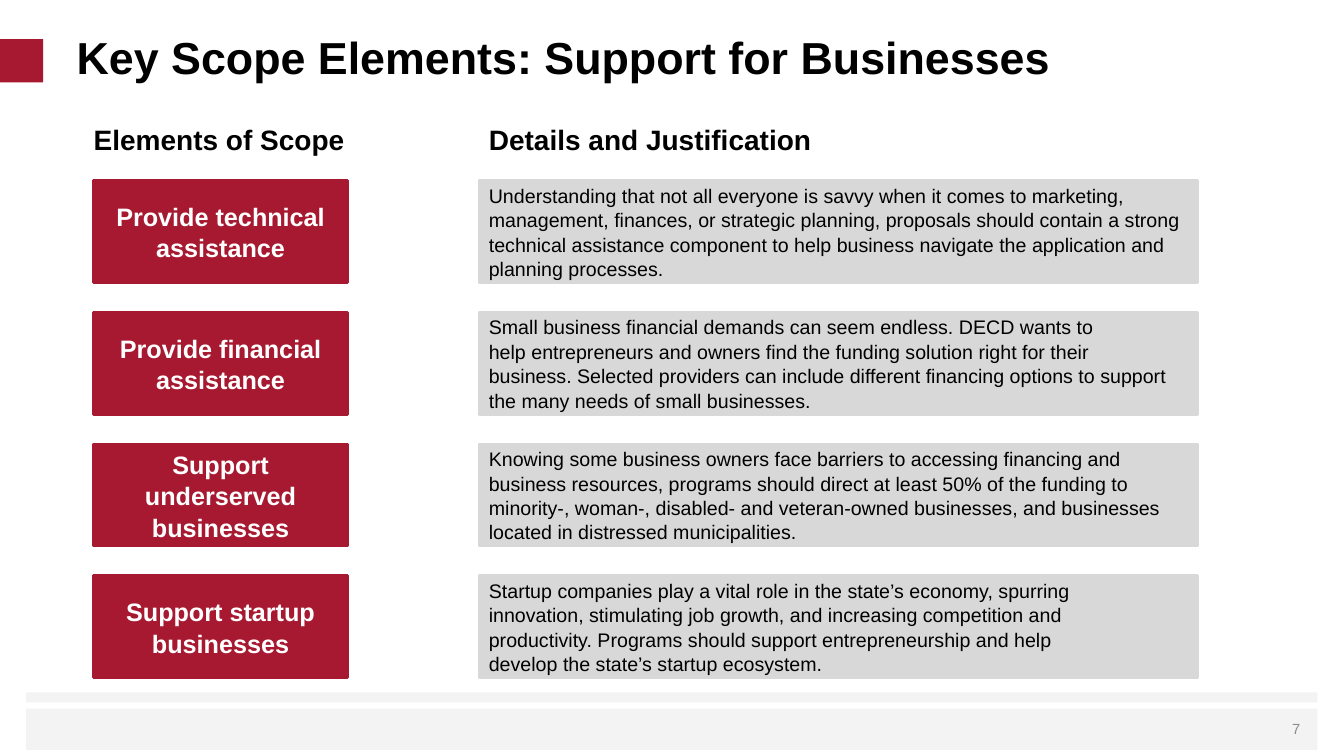
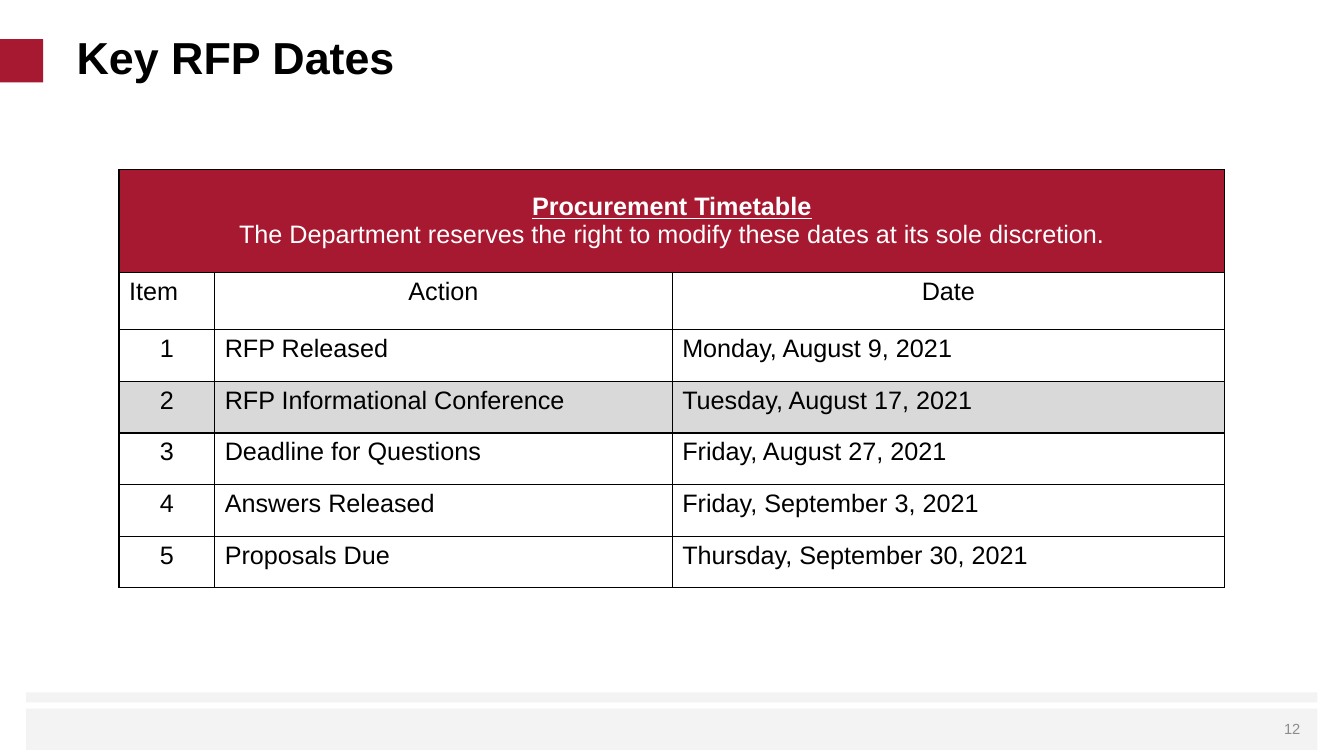
from lxml import etree
from pptx import Presentation
from pptx.dml.color import RGBColor
from pptx.enum.shapes import MSO_SHAPE
from pptx.enum.text import MSO_ANCHOR, MSO_AUTO_SIZE, PP_ALIGN
from pptx.oxml.ns import qn
from pptx.util import Cm, Pt

# Shared look
CRIMSON = RGBColor(0xA7, 0x19, 0x30)
BAND_GREY = RGBColor(0xF3, 0xF3, 0xF3)
DETAIL_GREY = RGBColor(0xD8, 0xD8, 0xD8)
ROW_GREY = RGBColor(0xD9, 0xD9, 0xD9)
NUMBER_GREY = RGBColor(0x8C, 0x8C, 0x8C)
WHITE = RGBColor(0xFF, 0xFF, 0xFF)
BLACK = RGBColor(0x00, 0x00, 0x00)
FONT = "Arial"
RECTANGLE = MSO_SHAPE.RECTANGLE
LEFT, CENTER, RIGHT = PP_ALIGN.LEFT, PP_ALIGN.CENTER, PP_ALIGN.RIGHT
TOP, MIDDLE, BOTTOM = MSO_ANCHOR.TOP, MSO_ANCHOR.MIDDLE, MSO_ANCHOR.BOTTOM
TITLE_ONLY = 5

SCOPE_ELEMENTS = [
    ("Provide technical assistance",
     ["Understanding that not all everyone is savvy when it comes to marketing, "
      "management, finances, or strategic planning, proposals should contain a "
      "strong technical assistance component to help business navigate the "
      "application and planning processes."]),
    ("Provide financial assistance",
     ["Small business financial demands can seem endless. DECD wants to",
      "help entrepreneurs and owners find the funding solution right for their",
      "business. Selected providers can include different financing options to support",
      "the many needs of small businesses."]),
    ("Support underserved businesses",
     ["Knowing some business owners face barriers to accessing financing and "
      "business resources, programs should direct at least 50% of the funding to "
      "minority-, woman-, disabled- and veteran-owned businesses, and businesses "
      "located in distressed municipalities."]),
    ("Support startup businesses",
     ["Startup companies play a vital role in the state’s economy, spurring",
      "innovation, stimulating job growth, and increasing competition and",
      "productivity. Programs should support entrepreneurship and help",
      "develop the state’s startup ecosystem."]),
]

TIMETABLE_HEADING = [
    "Procurement Timetable",
    "The Department reserves the right to modify these dates at its sole discretion.",
]
TIMETABLE = [
    ("Item", "Action", "Date"),
    ("1", "RFP Released", "Monday, August 9, 2021"),
    ("2", "RFP Informational Conference", "Tuesday, August 17, 2021"),
    ("3", "Deadline for Questions", "Friday, August 27, 2021"),
    ("4", "Answers Released", "Friday, September 3, 2021"),
    ("5", "Proposals Due", "Thursday, September 30, 2021"),
]
HIGHLIGHTED_ITEM = "2"


def write(frame, text, size=18, color=BLACK, bold=False, align=LEFT,
          anchor=TOP, spacing=1.0):
    """Fill a text frame with one paragraph, or one for each line of a list."""
    frame.word_wrap = True
    frame.vertical_anchor = anchor
    for index, line in enumerate([text] if isinstance(text, str) else text):
        paragraph = frame.add_paragraph() if index else frame.paragraphs[0]
        paragraph.alignment = align
        paragraph.line_spacing = spacing
        run = paragraph.add_run()
        run.text = line
        run.font.name = FONT
        run.font.size = Pt(size)
        run.font.bold = bold
        run.font.color.rgb = color


def add_box(slide, left, top, width, height, fill, outlined=False):
    """Add a flat rectangle, measured in centimetres."""
    box = slide.shapes.add_shape(RECTANGLE, Cm(left), Cm(top), Cm(width), Cm(height))
    box.shadow.inherit = False
    box.fill.solid()
    box.fill.fore_color.rgb = fill
    if outlined:
        box.line.color.rgb = fill
        box.line.width = Pt(2)
    else:
        box.line.fill.background()
    return box


def add_label(slide, left, top, width, height, text, **text_format):
    label = slide.shapes.add_textbox(Cm(left), Cm(top), Cm(width), Cm(height))
    write(label.text_frame, text, **text_format)


def add_framed_slide(prs, title_text, number):
    """Add a slide with the title, accent square, footer bands and number."""
    slide = prs.slides.add_slide(prs.slide_layouts[TITLE_ONLY])
    add_box(slide, 0.66, 17.45, 32.54, 0.25, BAND_GREY)
    add_box(slide, 0.66, 17.86, 32.54, 1.04, BAND_GREY)
    add_box(slide, 0, 0.99, 1.09, 1.09, CRIMSON)
    add_label(slide, 31.12, 17.86, 1.9, 1.02, number, size=10.5,
              color=NUMBER_GREY, align=RIGHT, anchor=MIDDLE)

    title = slide.shapes.title
    title.left, title.top, title.width, title.height = Cm(1.68), Cm(0.74), Cm(30.48), Cm(1.5)
    frame = title.text_frame
    frame.auto_size = MSO_AUTO_SIZE.NONE
    frame.margin_left = frame.margin_right = Cm(0.25)
    frame.margin_top, frame.margin_bottom = 0, Cm(0.13)
    write(frame, title_text, size=32, bold=True, anchor=BOTTOM)
    return slide


def add_scope_rows(slide, left, top):
    """Pair each scope element with its details, below two column headings."""
    element_width, detail_width, row_height, row_pitch = 6.4, 18.11, 2.57, 3.32
    detail_left = left + 9.71
    heading_top = top - 1.6
    add_label(slide, left - 0.25, heading_top, 6.88, 1.12, "Elements of Scope",
              size=20, bold=True)
    add_label(slide, detail_left, heading_top, 9.25, 1.12,
              "Details and Justification", size=20, bold=True)

    for row, (element, details) in enumerate(SCOPE_ELEMENTS):
        row_top = top + row * row_pitch
        element_box = add_box(slide, left, row_top, element_width, row_height,
                              CRIMSON, outlined=True)
        write(element_box.text_frame, element, color=WHITE, bold=True,
              align=CENTER, anchor=MIDDLE, spacing=1.04)
        detail_box = add_box(slide, detail_left, row_top, detail_width, row_height,
                             DETAIL_GREY, outlined=True)
        write(detail_box.text_frame, details, size=14, anchor=MIDDLE, spacing=1.04)


def style_cell(cell, fill):
    """Give a cell thin black borders and a plain fill."""
    properties = cell._tc.get_or_add_tcPr()
    for side in ("lnL", "lnR", "lnT", "lnB"):
        border = etree.SubElement(properties, qn(f"a:{side}"), w=str(Pt(1)))
        solid = etree.SubElement(border, qn("a:solidFill"))
        etree.SubElement(solid, qn("a:srgbClr"), val=str(BLACK))
    cell.fill.solid()
    cell.fill.fore_color.rgb = fill


def add_timetable(slide, left, top):
    """Add the dates table with a heading merged across its columns."""
    column_widths = [2.41, 11.53, 13.92]
    row_heights = [2.59, 1.45] + [1.3] * (len(TIMETABLE) - 1)
    table = slide.shapes.add_table(
        len(row_heights), len(column_widths), Cm(left), Cm(top),
        Cm(sum(column_widths)), Cm(sum(row_heights))).table
    table.first_row = table.horz_banding = False
    for column, width in zip(table.columns, column_widths):
        column.width = Cm(width)
    for row, height in zip(table.rows, row_heights):
        row.height = Cm(height)

    # Heading
    for cell in table.rows[0].cells:
        style_cell(cell, CRIMSON)
    heading = table.cell(0, 0)
    heading.merge(table.cell(0, len(column_widths) - 1))
    write(heading.text_frame, TIMETABLE_HEADING, color=WHITE, align=CENTER)
    heading.vertical_anchor = MIDDLE
    heading_font = heading.text_frame.paragraphs[0].runs[0].font
    heading_font.bold = heading_font.underline = True

    # Column names and dates
    for row, entries in enumerate(TIMETABLE):
        fill = ROW_GREY if entries[0] == HIGHLIGHTED_ITEM else WHITE
        for column, entry in enumerate(entries):
            cell = table.cell(row + 1, column)
            style_cell(cell, fill)
            centered = (row == 0) != (column == 0)
            write(cell.text_frame, entry, align=CENTER if centered else LEFT)


def main():
    prs = Presentation()
    prs.slide_width, prs.slide_height = Cm(33.87), Cm(19.05)
    scope_slide = add_framed_slide(prs, "Key Scope Elements: Support for Businesses", "7")
    add_scope_rows(scope_slide, 2.36, 4.55)
    dates_slide = add_framed_slide(prs, "Key RFP Dates", "12")
    add_timetable(dates_slide, 3, 4.27)
    prs.save("out.pptx")


if __name__ == "__main__":
    main()
